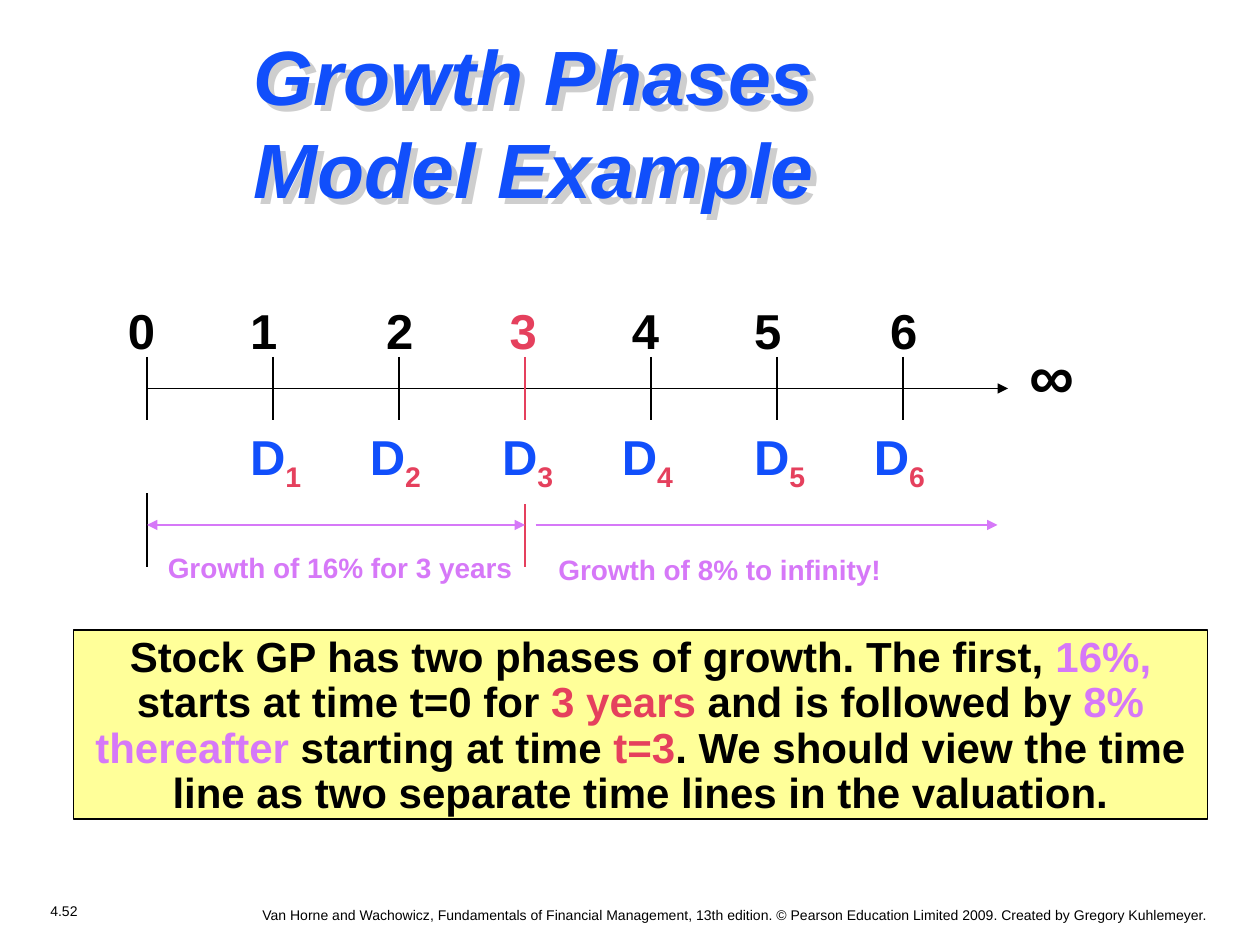
from lxml import etree
from pptx import Presentation
from pptx.dml.color import RGBColor
from pptx.enum.shapes import MSO_CONNECTOR, MSO_SHAPE
from pptx.enum.text import MSO_ANCHOR, PP_ALIGN
from pptx.oxml.ns import qn
from pptx.util import Inches, Pt

LEFT, CENTER, RIGHT = PP_ALIGN.LEFT, PP_ALIGN.CENTER, PP_ALIGN.RIGHT
TOP, MIDDLE = MSO_ANCHOR.TOP, MSO_ANCHOR.MIDDLE
STRAIGHT, RECTANGLE = MSO_CONNECTOR.STRAIGHT, MSO_SHAPE.RECTANGLE

BLACK, BLUE, RED, VIOLET = "000000", "114FFB", "E5405D", "D678F8"
YELLOW, GREY = "FFFF99", "CECECE"
CELLS_PER_INCH = 12  # the grid has 120 columns and 90 rows


def color(value):
    return RGBColor.from_string(value)


def grid(cells):
    return Inches(cells / CELLS_PER_INCH)


class Page:
    """Holds the style and the current slide; places are in grid cells."""

    font = "Arial"

    def __init__(self, deck):
        self.shapes = deck.slides.add_slide(deck.slide_layouts[6]).shapes

    def line(self, start, end, stroke=BLACK, arrows=()):
        line = self.shapes.add_connector(STRAIGHT, *map(grid, start + end))
        line.line.color.rgb = color(stroke)
        line.line.width = Pt(1)
        outline = line.line.fill._xPr
        for end_name in arrows:
            etree.SubElement(outline, qn(f"a:{end_name}"), type="triangle")
        etree.SubElement(line._element.spPr, qn("a:effectLst"))

    def text(self, place, spans, size, align=LEFT, anchor=TOP, wrap=True,
             spacing=None, tabs=(), **formats):
        box = self.shapes.add_textbox(*map(grid, place))
        self.fill_text(box, spans, size, align, anchor, wrap, spacing, tabs, formats)
        return box

    def panel(self, place, spans, size, spacing):
        box = self.shapes.add_shape(RECTANGLE, *map(grid, place))
        box.shadow.inherit = False
        box.fill.solid()
        box.fill.fore_color.rgb = color(YELLOW)
        box.line.color.rgb = color(BLACK)
        box.line.width = Pt(1)
        self.fill_text(box, spans, size, CENTER, TOP, True, spacing, (), {"bold": True})

    def fill_text(self, box, spans, size, align, anchor, wrap, spacing, tabs, formats):
        frame = box.text_frame
        frame.word_wrap = wrap
        frame.vertical_anchor = anchor
        para = frame.paragraphs[0]
        para.alignment = align
        if spacing:
            para.line_spacing = spacing
        if tabs:
            stops = etree.SubElement(para._p.get_or_add_pPr(), qn("a:tabLst"))
            for stop in tabs:
                etree.SubElement(stops, qn("a:tab"), pos=str(Inches(stop)), algn="l")
        for words, tint, *baseline in spans:
            span = para.add_run()
            span.text = words
            style = {"name": self.font, "size": Pt(size), **formats}
            for name, value in style.items():
                setattr(span.font, name, value)
            span.font.color.rgb = color(tint)
            if baseline:
                span._r.get_or_add_rPr().set("baseline", str(baseline[0]))

    def cast_shadow(self, box, tint, distance):
        effects = etree.SubElement(box._element.spPr, qn("a:effectLst"))
        shadow = etree.SubElement(effects, qn("a:outerShdw"), dist=str(Pt(distance)),
                                  dir="2700000", algn="tl", rotWithShape="0")
        etree.SubElement(shadow, qn("a:srgbClr"), val=tint)


def main():
    deck = Presentation()
    deck.slide_width, deck.slide_height = Inches(10), Inches(7.5)
    page = Page(deck)

    # Footer
    page.text((0.8, 85.4, 10.6, 2.9), [("4.52", BLACK)], 8, CENTER)
    page.text((2.9, 85.7, 113.4, 2.5), [(
        "Van Horne and Wachowicz, Fundamentals of Financial Management, 13th edition. "
        "© Pearson Education Limited 2009. Created by Gregory Kuhlemeyer.", BLACK)],
        8, RIGHT)

    # Title
    title = page.text((23, 2.2, 78, 18.7), [("Growth Phases Model Example", BLUE)],
                      44, anchor=MIDDLE, bold=True, italic=True)
    page.cast_shadow(title, GREY, 4.8)

    # Explanation
    page.panel((7, 60, 108, 18), [
        ("Stock GP has two phases of growth. The first, ", BLACK),
        ("16%,", VIOLET),
        (" starts at time t=0 for ", BLACK),
        ("3 years", RED),
        (" and is followed by ", BLACK),
        ("8% thereafter", VIOLET),
        (" starting at time ", BLACK),
        ("t=3", RED),
        (". We should view the time line as two separate time lines in the valuation.",
         BLACK)], 24, 0.9)

    # Time line with a tick for each year
    start, step, switch = 14, 12, 3
    page.line((start, 37), (96, 37), arrows=["tailEnd"])
    years = range(7)
    tints = [RED if year == switch else BLACK for year in years]
    for year, tint in zip(years, tints):
        column = start + year * step
        page.line((column, 34), (column, 40), tint)
    page.text((96.9, 31.5, 6.7, 8.4), [("∞", BLACK)], 36, wrap=False, bold=True)

    # Years above the line, dividends below it
    numbers = [(f"\t{year}" if year else "0", tint) for year, tint in zip(years, tints)]
    page.text((11, 28, 80, 6.8), numbers, 28, bold=True,
              tabs=[0.97, 2.05, 3.03, 4, 4.97, 6.05])
    dividends = []
    for year in years[1:]:
        dividends += [("\tD", BLUE), (str(year), RED, -25000)]
    page.text((11, 40, 80, 6.8), dividends, 28, bold=True,
              tabs=[0.97, 1.92, 2.97, 3.92, 4.97, 5.92])

    # Growth phases
    middle = start + switch * step
    page.line((middle, 48), (middle, 54), RED)
    page.line((start, 47), (start, 54))
    page.line((start, 50), (middle, 50), VIOLET, ["headEnd", "tailEnd"])
    page.line((middle + 1, 50), (95, 50), VIOLET, ["tailEnd"])
    page.text((14.8, 51.8, 35.4, 4.4), [("Growth of 16% for 3 years", VIOLET)], 16,
              wrap=False, bold=True)
    page.text((52, 52, 33.4, 4.4), [("Growth of 8% to infinity!", VIOLET)], 16,
              wrap=False, bold=True)

    deck.save("out.pptx")


if __name__ == "__main__":
    main()
